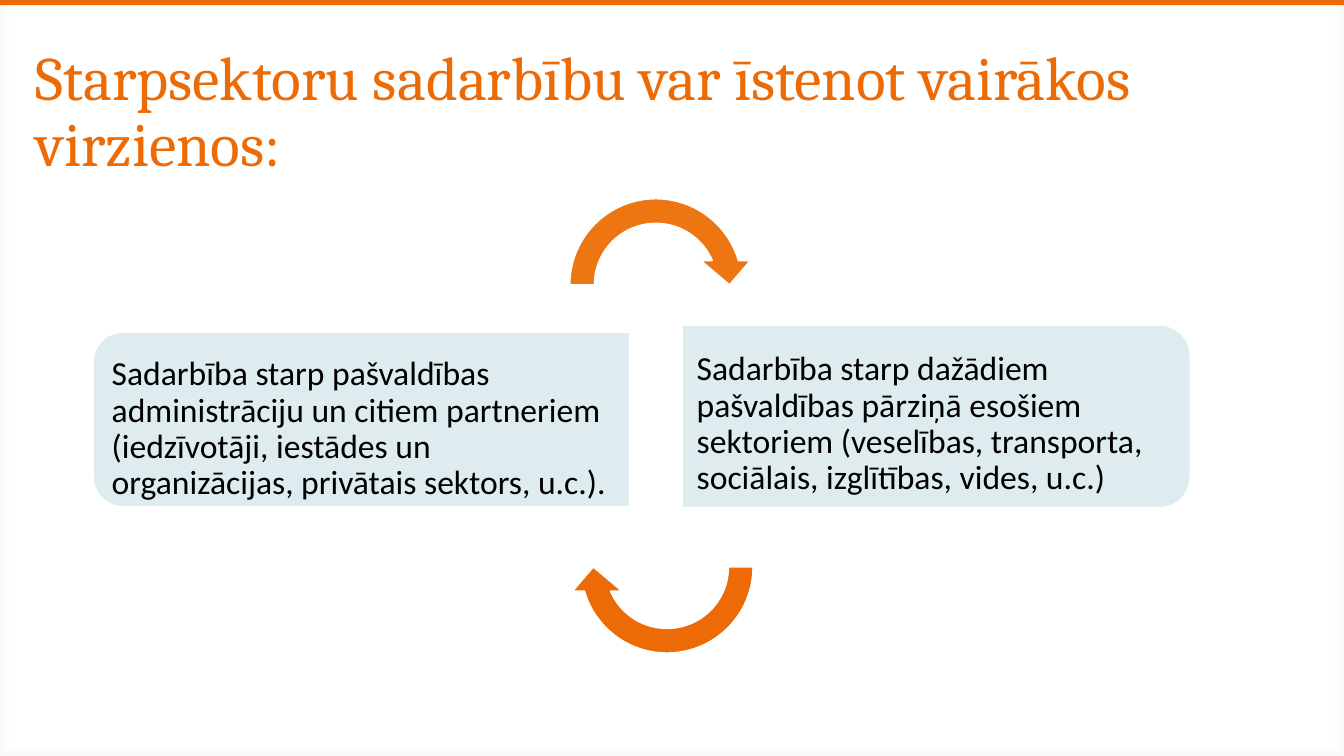
from dataclasses import dataclass

from pptx import Presentation
from pptx.dml.color import RGBColor
from pptx.enum.shapes import MSO_SHAPE
from pptx.enum.text import MSO_ANCHOR, MSO_AUTO_SIZE, PP_ALIGN
from pptx.oxml import parse_xml
from pptx.oxml.ns import nsdecls
from pptx.util import Pt

EMU_PER_PX = 9144  # 100 px to the inch


def px(length):
    return length * EMU_PER_PX


@dataclass(frozen=True)
class Theme:
    orange: str = "ED6B06"
    light_orange: str = "ED7613"
    panel: str = "DEECEF"
    white: str = "FFFFFF"
    edge: str = "FAFAFA"
    ink: str = "000000"
    title_font: str = "Cambria"
    body_font: str = "Calibri"
    title_size: int = 44
    body_size: int = 24


class SlideBuilder:
    def __init__(self, page, theme):
        self.page = page
        self.theme = theme
        self.shapes = page.shapes

    def background(self):
        """Fill the page with white that greys slightly at the edges."""
        stops = "".join(
            f'<a:gs pos="{position}"><a:srgbClr val="{color}"/></a:gs>'
            for position, color in ((0, self.theme.white), (96000, self.theme.white),
                                    (100000, self.theme.edge)))
        fill = self.page.background.fill
        fill.solid()
        properties = self.page.element.cSld.bg.bgPr
        properties.replace(properties[0], parse_xml(
            f'<a:gradFill {nsdecls("a")} rotWithShape="1"><a:gsLst>{stops}</a:gsLst>'
            '<a:path path="rect"><a:fillToRect l="50000" t="50000" r="50000" b="50000"/>'
            '</a:path></a:gradFill>'))

    def start_group(self):
        self.shapes = self.page.shapes.add_group_shape().shapes

    def shape(self, kind, frame, color, rotation=0, outlined=True):
        shape = self.shapes.add_shape(kind, *map(px, frame))
        shape.shadow.inherit = False
        shape.rotation = rotation
        shape.fill.solid()
        shape.fill.fore_color.rgb = RGBColor.from_string(color)
        if outlined:
            shape.line.color.rgb = RGBColor.from_string(self.theme.white)
            shape.line.width = Pt(1)
        else:
            shape.line.fill.background()
        return shape

    def fill_text(self, box, text, font, size, color):
        frame = box.text_frame
        frame.word_wrap = True
        frame.auto_size = MSO_AUTO_SIZE.NONE
        para = frame.paragraphs[0]
        para.alignment = PP_ALIGN.LEFT
        para.line_spacing = 0.9
        span = para.add_run()
        span.text = text
        span.font.name = font
        span.font.size = Pt(size)
        span.font.color.rgb = RGBColor.from_string(color)
        return frame

    def title(self, frame, text):
        box = self.page.shapes.title
        box.left, box.top, box.width, box.height = map(px, frame)
        theme = self.theme
        self.fill_text(box, text, theme.title_font, theme.title_size,
                       theme.orange).vertical_anchor = MSO_ANCHOR.MIDDLE

    def panel(self, frame, rotation):
        """Draw a panel whose two rounded corners face outwards."""
        box = self.shape(MSO_SHAPE.ROUND_2_SAME_RECTANGLE, frame, self.theme.panel, rotation)
        box.adjustments[0] = 0.167
        box.adjustments[1] = 0

    def text(self, frame, text, left_inset, right_inset):
        box = self.shapes.add_textbox(*map(px, frame))
        theme = self.theme
        body = self.fill_text(box, text, theme.body_font, theme.body_size, theme.ink)
        body.vertical_anchor = MSO_ANCHOR.TOP
        body.margin_left, body.margin_right = px(left_inset), px(right_inset)
        body.margin_top = body.margin_bottom = px(17)

    def arrow(self, left, top, color, rotation=0):
        self.shape(MSO_SHAPE.CIRCULAR_ARROW, (left, top, 195, 195), color, rotation)


def main():
    deck = Presentation()
    deck.slide_width, deck.slide_height = px(1333), px(750)
    theme = Theme()
    builder = SlideBuilder(deck.slides.add_slide(deck.slide_layouts[5]), theme)

    # Page frame and title
    builder.background()
    builder.shape(MSO_SHAPE.RECTANGLE, (0, 0, 1333, 5), theme.orange, outlined=False)
    builder.title((25, 40, 1287, 145), "Starpsektoru sadarbību var īstenot vairākos virzienos:")

    # Two directions of cooperation
    builder.start_group()
    builder.panel((272, 150, 173, 532), 270)
    builder.text((101, 337, 523, 156),
                 "Sadarbība starp pašvaldības administrāciju un citiem partneriem "
                 "(iedzīvotāji, iestādes un organizācijas, privātais sektors, u.c.).", 10, 15)
    builder.panel((838, 161, 181, 504), 90)
    builder.text((676, 332, 495, 163),
                 "Sadarbība starp dažādiem pašvaldības pārziņā esošiem sektoriem "
                 "(veselības, transporta, sociālais, izglītības, vides, u.c.)", 15, 10)

    # Arrows closing the cycle
    builder.arrow(553, 185, theme.light_orange)
    builder.arrow(564, 465, theme.orange, 180)

    deck.save("out.pptx")


if __name__ == "__main__":
    main()
